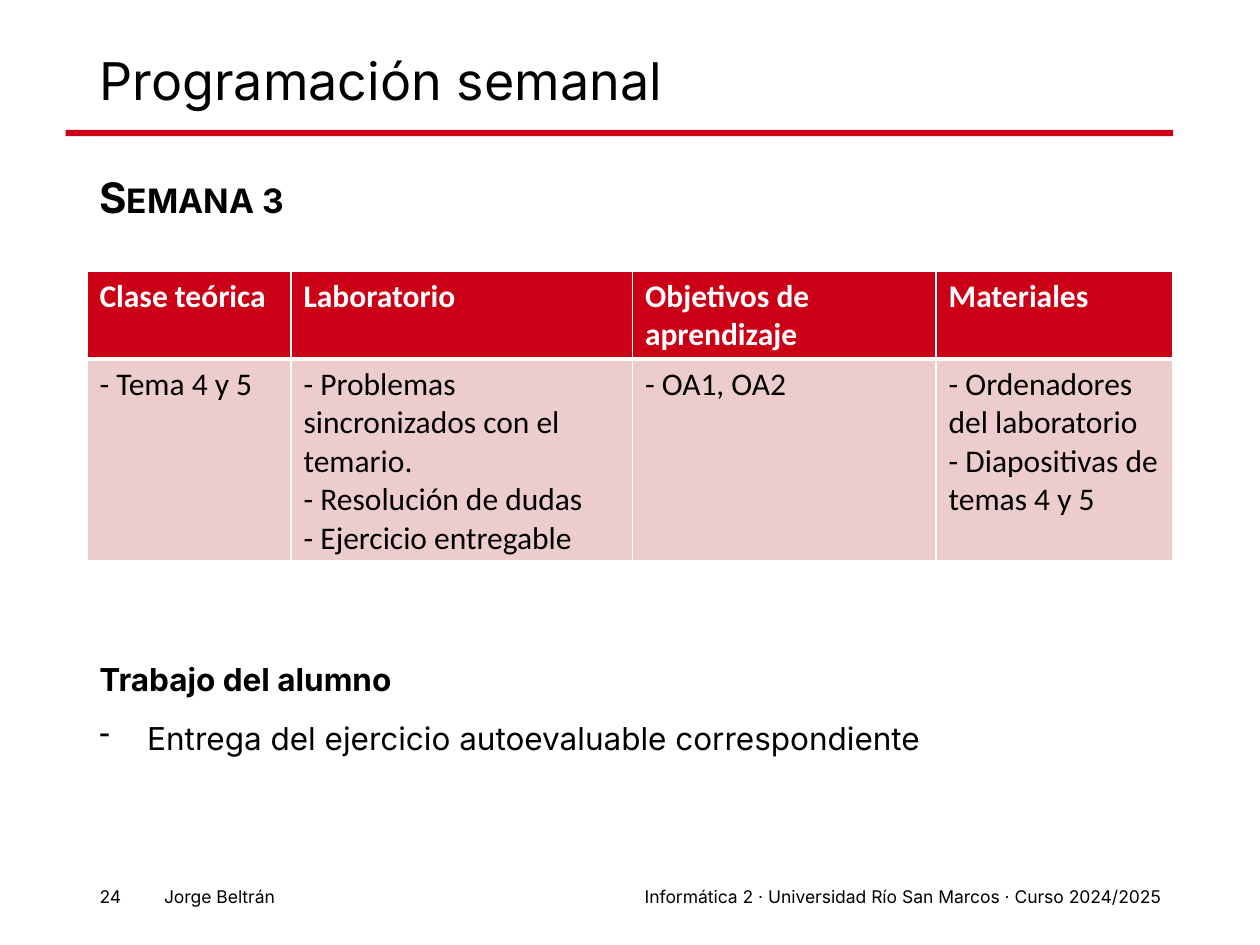
import pptx
import pptx.util
import pptx.dml.color
import pptx.enum.shapes
import pptx.enum.text
import pptx.oxml.ns
from lxml import etree

Inches = pptx.util.Inches
Pt = pptx.util.Pt
ALIGN = pptx.enum.text.PP_ALIGN
ANCHOR = pptx.enum.text.MSO_ANCHOR

RED, PINK, BLACK, WHITE = "CB0017", "ECCCCC", "000000", "FFFFFF"
LEFT, WIDTH = 0.69, 8.62

TITLE = "Programación semanal"
WEEK = "Semana 3"
HEADERS = ["Clase teórica", "Laboratorio", "Objetivos de aprendizaje", "Materiales"]
CONTENTS = [
    ["- Tema 4 y 5"],
    ["- Problemas sincronizados con el temario.", "- Resolución de dudas", "- Ejercicio entregable"],
    ["- OA1, OA2"],
    ["- Ordenadores del laboratorio", "- Diapositivas de temas 4 y 5"],
]
COLUMN_WIDTHS = [1.62, 2.71, 2.41, 1.88]
ROW_HEIGHTS = [0.7, 1.6]
WORK = ["Trabajo del alumno", "Entrega del ejercicio autoevaluable correspondiente"]
FOOTERS = [
    ("Informática 2 · Universidad Río San Marcos · Curso 2024/2025", 2.53, 6.78),
    ("24", 0.58, 0.48),
    ("Jorge Beltrán", 0.21, 2.07),
]


def rgb(value):
    return pptx.dml.color.RGBColor.from_string(value)


def format_text(frame, size, font, color=BLACK, bold=False):
    for para in frame.paragraphs:
        for span in para.runs:
            span.font.size = Pt(size)
            span.font.name = font
            span.font.bold = bold
            span.font.color.rgb = rgb(color)


def add_text(page, lines, place, size, bold=False, align=ALIGN.LEFT, spacing=None, before=0):
    box = page.shapes.add_textbox(*map(Inches, place))
    frame = box.text_frame
    frame.word_wrap = True
    frame.text = "\n".join(lines)
    format_text(frame, size, "Inter", bold=bold)
    for para in frame.paragraphs:
        para.alignment = align
        para.line_spacing = spacing
        para.space_before = Pt(before)
    return frame


def add_dash(para, indent):
    properties = para._p.get_or_add_pPr()
    properties.set("marL", str(Inches(indent)))
    properties.set("indent", str(-Inches(indent)))
    bullet = etree.SubElement(properties, pptx.oxml.ns.qn("a:buChar"))
    bullet.set("char", "-")


def set_borders(cell, widths):
    properties = cell._tc.get_or_add_tcPr()
    for position, (side, width) in enumerate(widths.items()):
        line = etree.Element(pptx.oxml.ns.qn("a:ln" + side), w=str(Pt(width)))
        fill = etree.SubElement(line, pptx.oxml.ns.qn("a:solidFill"))
        etree.SubElement(fill, pptx.oxml.ns.qn("a:srgbClr"), val=WHITE)
        properties.insert(position, line)


def fill_cell(cell, lines, background, color, bold, widths):
    cell.text = "\n".join(lines)
    format_text(cell.text_frame, 18, "Calibri", color, bold)
    cell.fill.solid()
    cell.fill.fore_color.rgb = rgb(background)
    set_borders(cell, widths)


def add_schedule(page):
    place = (LEFT, 2.15, WIDTH, sum(ROW_HEIGHTS))
    table = page.shapes.add_table(2, len(HEADERS), *map(Inches, place)).table
    for row, height in zip(table.rows, ROW_HEIGHTS):
        row.height = Inches(height)
    for index, width in enumerate(COLUMN_WIDTHS):
        table.columns[index].width = Inches(width)
        fill_cell(table.cell(0, index), [HEADERS[index]], RED, WHITE, True,
                  {"L": 1, "R": 1, "T": 1, "B": 3})
        fill_cell(table.cell(1, index), CONTENTS[index], PINK, BLACK, False,
                  {"L": 1, "R": 1, "T": 3, "B": 1})


def main():
    deck = pptx.Presentation()
    deck.slide_width, deck.slide_height = Inches(10), Inches(7.5)
    page = deck.slides.add_slide(deck.slide_layouts[6])

    rule = page.shapes.add_shape(pptx.enum.shapes.MSO_SHAPE.RECTANGLE,
                                 *map(Inches, (0.52, 1.03, 8.79, 0.05)))
    rule.shadow.inherit = False
    rule.fill.solid()
    rule.fill.fore_color.rgb = rgb(RED)
    rule.line.fill.background()

    for text, left, width in FOOTERS:
        add_text(page, [text], (left, 6.98, width, 0.27), 10, align=ALIGN.RIGHT)

    title = add_text(page, [TITLE], (LEFT, 0.4, WIDTH, 0.52), 29.7, spacing=0.9)
    title.vertical_anchor = ANCHOR.MIDDLE

    add_schedule(page)

    work = add_text(page, WORK, (LEFT, 5.13, WIDTH, 1.7), 18, True, spacing=1.2, before=7.5)
    task = work.paragraphs[1]
    task.runs[0].font.bold = False
    add_dash(task, 0.38)

    week = add_text(page, [WEEK], (LEFT, 1.23, WIDTH, 0.68), 24, True, spacing=1.2, before=7.5)
    week.paragraphs[0].runs[0]._r.get_or_add_rPr().set("cap", "small")

    deck.save("out.pptx")


if __name__ == "__main__":
    main()
